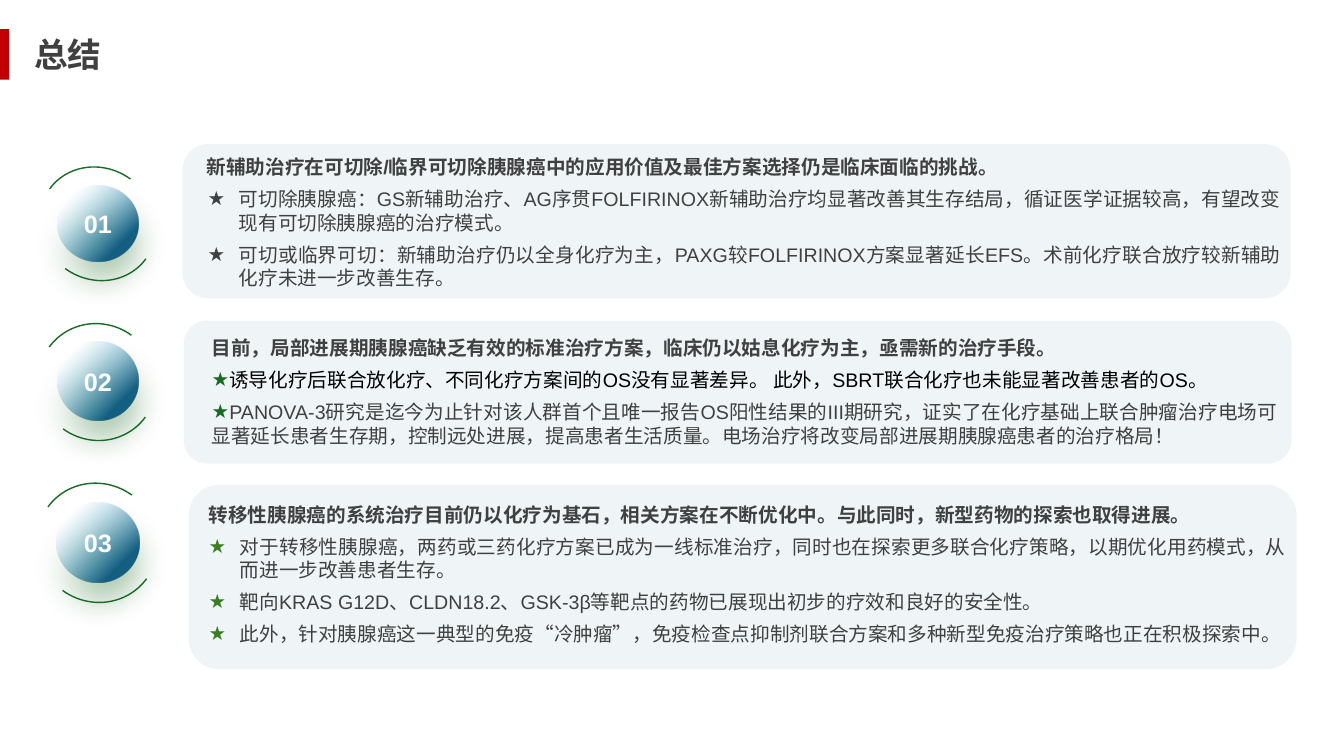
from dataclasses import dataclass
from typing import Any, NamedTuple, Optional

from pptx import Presentation
from pptx.dml.color import RGBColor
from pptx.enum.shapes import MSO_SHAPE as Preset
from pptx.enum.text import MSO_ANCHOR as Anchor, MSO_AUTO_SIZE as AutoSize, PP_ALIGN as Align
from pptx.oxml import parse_xml
from pptx.oxml.ns import nsdecls, qn
from pptx.util import Inches, Pt

COLORS = {
    "accent": "C00000", "text": "404040", "black": "000000", "white": "FFFFFF",
    "card": "EFF5F7", "green": "196B24", "leaf": "3B7D23",
    "sky": "83CBEB", "ocean": "156082",
}


class Box(NamedTuple):
    left: float
    top: float
    width: float
    height: float

    def lengths(self) -> list:
        return [Inches(value) for value in self]


@dataclass
class Point:
    text: str
    color: str = "text"


@dataclass
class Section:
    number: str
    arcs: Box
    disc: Box
    card: Box
    body: Box
    heading: str
    points: list[Point]
    star: str
    indent: float = 0.31
    anchor: Any = Anchor.TOP
    insets: tuple[float, float] = (0.1, 0.05)


SECTIONS = [
    Section("01", Box(0.42, 1.63, 1.1, 1.18), Box(0.57, 1.84, 0.8, 0.75),
            Box(1.81, 1.43, 10.99, 1.53), Box(1.95, 1.49, 10.85, 1.45),
            "新辅助治疗在可切除/临界可切除胰腺癌中的应用价值及最佳方案选择仍是临床面临的挑战。",
            [Point("可切除胰腺癌：GS新辅助治疗、AG序贯FOLFIRINOX新辅助治疗均显著改善其生存结局，"
                   "循证医学证据较高，有望改变现有可切除胰腺癌的治疗模式。"),
             Point("可切或临界可切：新辅助治疗仍以全身化疗为主，PAXG较FOLFIRINOX方案显著延长EFS。"
                   "术前化疗联合放疗较新辅助化疗未进一步改善生存。")],
            star="text", indent=0.32),
    Section("02", Box(0.39, 3.2, 1.15, 1.18), Box(0.57, 3.39, 0.8, 0.78),
            Box(1.82, 3.18, 10.99, 1.42), Box(1.97, 3.26, 10.83, 1.25),
            "目前，局部进展期胰腺癌缺乏有效的标准治疗方案，临床仍以姑息化疗为主，亟需新的治疗手段。",
            [Point("诱导化疗后联合放化疗、不同化疗方案间的OS没有显著差异。 "
                   "此外，SBRT联合化疗也未能显著改善患者的OS。", "black"),
             Point("PANOVA-3研究是迄今为止针对该人群首个且唯一报告OS阳性结果的III期研究，"
                   "证实了在化疗基础上联合肿瘤治疗电场可显著延长患者生存期，控制远处进展，"
                   "提高患者生活质量。电场治疗将改变局部进展期胰腺癌患者的治疗格局！")],
            star="green", indent=0, anchor=Anchor.MIDDLE, insets=(0.13, 0.07)),
    Section("03", Box(0.38, 4.78, 1.17, 1.21), Box(0.56, 4.99, 0.82, 0.79),
            Box(1.87, 4.81, 10.99, 1.83), Box(1.97, 4.94, 10.89, 1.53),
            "转移性胰腺癌的系统治疗目前仍以化疗为基石，相关方案在不断优化中。与此同时，新型药物的探索也取得进展。",
            [Point("对于转移性胰腺癌，两药或三药化疗方案已成为一线标准治疗，"
                   "同时也在探索更多联合化疗策略，以期优化用药模式，从而进一步改善患者生存。"),
             Point("靶向KRAS G12D、CLDN18.2、GSK-3β等靶点的药物已展现出初步的疗效和良好的安全性。"),
             Point("此外，针对胰腺癌这一典型的免疫“冷肿瘤”，"
                   "免疫检查点抑制剂联合方案和多种新型免疫治疗策略也正在积极探索中。")],
            star="leaf"),
]


def rgb(name: str) -> RGBColor:
    return RGBColor.from_string(COLORS[name])


def apply(target: Any, formats: dict[str, Any]) -> None:
    for name, value in formats.items():
        setattr(target, name, value)


def write(paragraph: Any, text: str, size: float, color: str, bold: bool) -> None:
    run = paragraph.add_run()
    run.text = text
    apply(run.font, {"name": "Arial", "size": Pt(size), "bold": bold})
    run.font.color.rgb = rgb(color)


def add_preset(shapes: Any, preset: Any, box: Box, fill: Optional[str] = None) -> Any:
    shape = shapes.add_shape(preset, *box.lengths())
    shape.shadow.inherit = False
    shape.line.fill.background()
    if fill:
        shape.fill.solid()
        shape.fill.fore_color.rgb = rgb(fill)
    else:
        shape.fill.background()
    return shape


def shade_disc(disc: Any) -> None:
    """Fade from a clear top-left corner to blue, over a soft green shadow."""
    properties = disc._element.spPr
    properties.replace(properties.find(qn("a:noFill")), parse_xml(
        f'<a:gradFill {nsdecls("a")} rotWithShape="1"><a:gsLst>'
        f'<a:gs pos="16000"><a:srgbClr val="{COLORS["sky"]}"><a:alpha val="0"/></a:srgbClr></a:gs>'
        f'<a:gs pos="77000"><a:srgbClr val="{COLORS["ocean"]}"/></a:gs></a:gsLst>'
        '<a:path path="circle"><a:fillToRect r="100000" b="100000"/></a:path></a:gradFill>'))
    properties.find(qn("a:effectLst")).append(parse_xml(
        f'<a:outerShdw {nsdecls("a")} blurRad="{Pt(22)}" dist="{Pt(13)}" dir="5400000" '
        f'algn="t" rotWithShape="0"><a:srgbClr val="{COLORS["green"]}">'
        '<a:alpha val="42000"/></a:srgbClr></a:outerShdw>'))


def add_badge(slide: Any, section: Section) -> None:
    badge = slide.shapes.add_group_shape().shapes
    for rotation in (306.1, 126.1):
        arc = add_preset(badge, Preset.ARC, section.arcs)
        arc.rotation = rotation
        arc.line.color.rgb = rgb("green")
        arc.line.width = Pt(1)
    disc = add_preset(badge, Preset.OVAL, section.disc)
    shade_disc(disc)
    apply(disc.text_frame, {"margin_left": 0, "margin_right": 0, "margin_top": 0,
                            "margin_bottom": 0, "vertical_anchor": Anchor.MIDDLE})
    number = disc.text_frame.paragraphs[0]
    number.alignment = Align.CENTER
    write(number, section.number, 18, "white", True)


def add_star(paragraph: Any, color: str, indent: float) -> None:
    properties = paragraph._p.get_or_add_pPr()
    properties.set("marL", str(Inches(indent)))
    properties.set("indent", str(Inches(-0.31)))
    for bullet in (f'<a:buClr {nsdecls("a")}><a:srgbClr val="{COLORS[color]}"/></a:buClr>',
                   f'<a:buFont {nsdecls("a")} typeface="Arial"/>',
                   f'<a:buChar {nsdecls("a")} char="★"/>'):
        properties.append(parse_xml(bullet))


def add_card(slide: Any, section: Section) -> None:
    add_preset(slide.shapes, Preset.ROUNDED_RECTANGLE, section.card, "card")
    frame = slide.shapes.add_textbox(*section.body.lengths()).text_frame
    side, edge = (Inches(inset) for inset in section.insets)
    apply(frame, {"word_wrap": True, "auto_size": AutoSize.SHAPE_TO_FIT_TEXT,
                  "vertical_anchor": section.anchor, "margin_left": side,
                  "margin_right": side, "margin_top": edge, "margin_bottom": edge})
    spacing = {"alignment": Align.JUSTIFY, "space_after": Pt(6)}
    heading = frame.paragraphs[0]
    apply(heading, spacing)
    write(heading, section.heading, 14, "text", True)
    for point in section.points:
        paragraph = frame.add_paragraph()
        apply(paragraph, spacing)
        add_star(paragraph, section.star, section.indent)
        write(paragraph, point.text, 14, point.color, False)


def add_title(slide: Any) -> None:
    add_preset(slide.shapes, Preset.RECTANGLE, Box(0, 0.29, 0.09, 0.5), "accent")
    title = slide.shapes.title
    apply(title, dict(zip(Box._fields, Box(0.24, 0.29, 5.27, 0.5).lengths())))
    apply(title.text_frame, {"word_wrap": True, "auto_size": AutoSize.NONE,
                             "vertical_anchor": Anchor.MIDDLE})
    heading = title.text_frame.paragraphs[0]
    heading.alignment = Align.LEFT
    write(heading, "总结", 24, "text", True)


def main() -> None:
    deck = Presentation()
    apply(deck, {"slide_width": Inches(13.33), "slide_height": Inches(7.5)})
    slide = deck.slides.add_slide(deck.slide_layouts[5])
    add_title(slide)
    # Numbered badge beside each summary card
    for section in SECTIONS:
        add_badge(slide, section)
        add_card(slide, section)
    deck.save("out.pptx")


if __name__ == "__main__":
    main()
